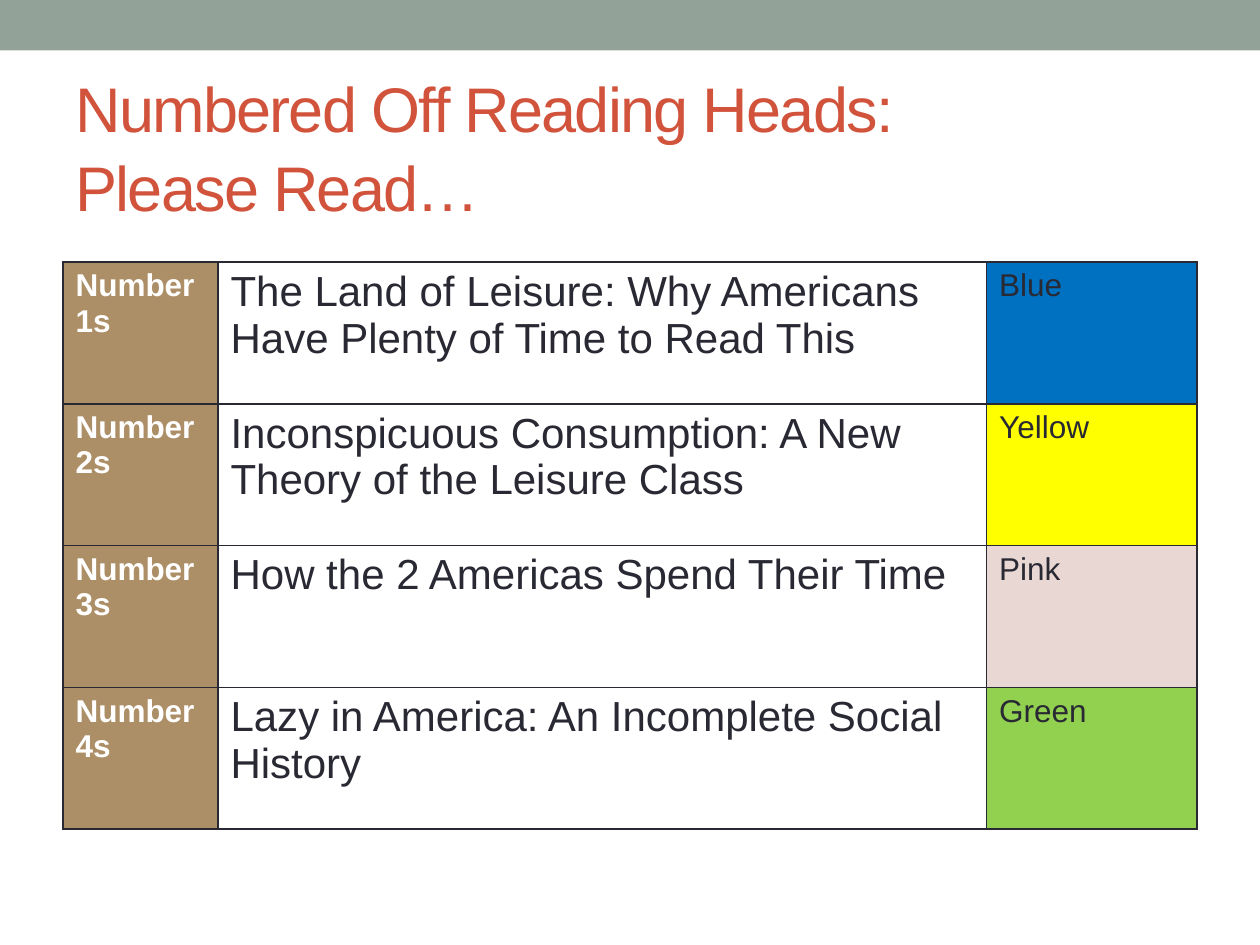
from dataclasses import dataclass

from lxml import etree
from pptx import Presentation
from pptx.dml.color import RGBColor
from pptx.enum.shapes import MSO_SHAPE
from pptx.enum.text import MSO_ANCHOR
from pptx.oxml.ns import qn
from pptx.util import Inches, Pt

RECTANGLE = MSO_SHAPE.RECTANGLE
MIDDLE = MSO_ANCHOR.MIDDLE


@dataclass(frozen=True)
class Theme:
    font: str = "Arial"
    band: str = "93A299"
    title: str = "D2533C"
    ink: str = "292934"
    white: str = "FFFFFF"
    label: str = "AD8F67"
    title_size: int = 36
    reading_size: int = 24
    label_size: int = 18
    border_width: int = 1


THEME = Theme()
COLUMN_WIDTHS = (1.23, 6.1, 1.67)
READINGS = (
    ("Number 1s", "The Land of Leisure: Why Americans Have Plenty of Time to Read This", "Blue", "0070C0"),
    ("Number 2s", "Inconspicuous Consumption: A New Theory of the Leisure Class", "Yellow", "FFFF00"),
    ("Number 3s", "How the 2 Americas Spend Their Time", "Pink", "E9D7D3"),
    ("Number 4s", "Lazy in America: An Incomplete Social History", "Green", "92D050"),
)


def style_font(paragraph, size, color, bold=False):
    font = paragraph.font
    font.name = THEME.font
    font.size = Pt(size)
    font.bold = bold
    font.color.rgb = RGBColor.from_string(color)


def add_band(slide, width):
    shape = slide.shapes.add_shape(RECTANGLE, 0, 0, width, Inches(0.4))
    shape.shadow.inherit = False
    shape.fill.solid()
    shape.fill.fore_color.rgb = RGBColor.from_string(THEME.band)
    shape.line.fill.background()


def add_title(slide, text):
    shape = slide.shapes.add_textbox(Inches(0.5), Inches(0.58), Inches(9), Inches(1.08))
    frame = shape.text_frame
    frame.word_wrap = True
    frame.vertical_anchor = MIDDLE
    frame.margin_top = Inches(0.11)
    paragraph = frame.paragraphs[0]
    paragraph.text = text
    paragraph.line_spacing = 1.05
    style_font(paragraph, THEME.title_size, THEME.title)
    for run in paragraph.runs:
        run.font._element.set("spc", "-100")


def add_borders(cell):
    properties = cell._tc.get_or_add_tcPr()
    for index, side in enumerate(("a:lnL", "a:lnR", "a:lnT", "a:lnB")):
        line = etree.Element(qn(side), w=str(Pt(THEME.border_width)))
        fill = etree.SubElement(line, qn("a:solidFill"))
        etree.SubElement(fill, qn("a:srgbClr"), val=THEME.ink)
        properties.insert(index, line)


def fill_cell(cell, text, fill, size, color, bold=False):
    cell.text = text
    style_font(cell.text_frame.paragraphs[0], size, color, bold)
    cell.fill.solid()
    cell.fill.fore_color.rgb = RGBColor.from_string(fill)
    add_borders(cell)


def add_reading_table(slide):
    frame = slide.shapes.add_table(
        len(READINGS), len(COLUMN_WIDTHS), Inches(0.5), Inches(2.08), Inches(9), Inches(4.5)
    )
    table = frame.table
    table.first_row = False
    table.horz_banding = False
    for column, width in zip(table.columns, COLUMN_WIDTHS):
        column.width = Inches(width)
    for row, (group, reading, color_name, color) in zip(table.rows, READINGS):
        label_cell, reading_cell, color_cell = row.cells
        fill_cell(label_cell, group, THEME.label, THEME.label_size, THEME.white, True)
        fill_cell(reading_cell, reading, THEME.white, THEME.reading_size, THEME.ink)
        fill_cell(color_cell, color_name, color, THEME.label_size, THEME.ink)


def main():
    presentation = Presentation()
    presentation.slide_width = Inches(10)
    presentation.slide_height = Inches(7.5)
    slide = presentation.slides.add_slide(presentation.slide_layouts[6])
    add_band(slide, presentation.slide_width)
    add_title(slide, "Numbered Off Reading Heads:\vPlease Read…")
    add_reading_table(slide)
    presentation.save("out.pptx")


if __name__ == "__main__":
    main()
